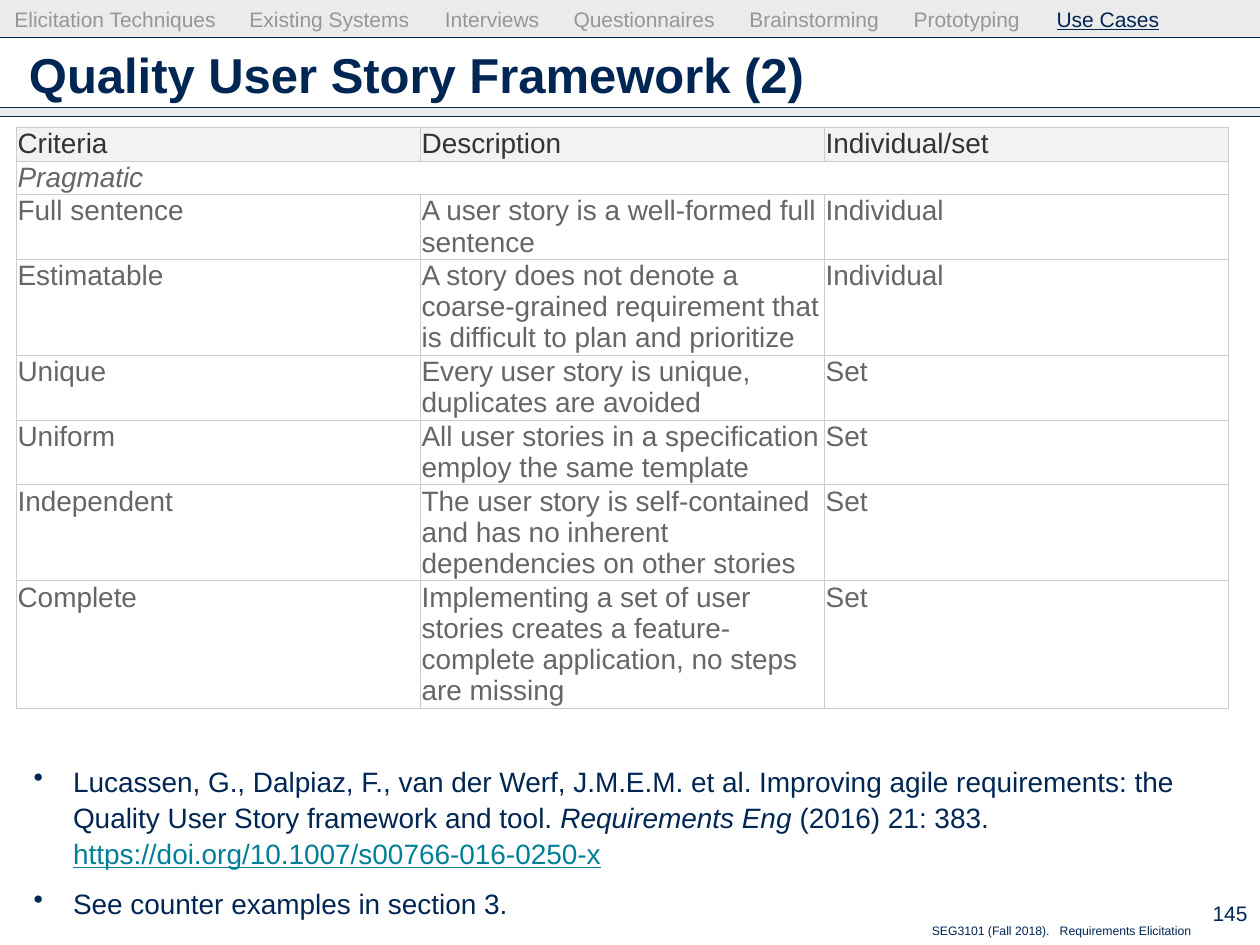
import pptx
import pptx.util
import pptx.oxml
import pptx.oxml.ns
import pptx.dml.color
import pptx.enum.text
import pptx.enum.shapes

Pt = pptx.util.Pt
Anchor = pptx.enum.text.MSO_ANCHOR
Align = pptx.enum.text.PP_ALIGN
qn = pptx.oxml.ns.qn

COLORS = {
    "navy": "002654", "band": "CDCDCD", "muted": "969696", "link": "007F99",
    "heading": "333333", "body": "666666", "header_fill": "F2F2F2",
    "cell_fill": "FFFFFF", "border": "CCCCCC",
}
SLIDE_WIDTH, SLIDE_HEIGHT = 720, 540
TITLE = "Quality User Story Framework (2)"
PAGE_NUMBER = "145"

SECTIONS = ["Elicitation Techniques", "Existing Systems", "Interviews", "Questionnaires",
            "Brainstorming", "Prototyping", "Use Cases"]
SECTION_TABS = [134.3, 246, 319.5, 420, 513.8, 595.5]
FOOTER = ["SEG3101 (Fall 2018).", "Requirements Elicitation"]
FOOTER_TABS = [73.1]

HEADER = ("Criteria", "Description", "Individual/set")
GROUP = "Pragmatic"
CRITERIA = [
    # criterion, description, scope, lines of text
    ("Full sentence", "A user story is a well-formed full sentence", "Individual", 2),
    ("Estimatable", "A story does not denote a coarse-grained requirement that is difficult "
     "to plan and prioritize", "Individual", 3),
    ("Unique", "Every user story is unique, duplicates are avoided", "Set", 2),
    ("Uniform", "All user stories in a specification employ the same template", "Set", 2),
    ("Independent", "The user story is self-contained and has no inherent dependencies on "
     "other stories", "Set", 3),
    ("Complete", "Implementing a set of user stories creates a feature-complete application, "
     "no steps are missing", "Set", 4),
]
TABLE_LEFT, TABLE_TOP, COLUMN_WIDTH = 9.36, 72.7, 230.9
LINE_HEIGHT, CELL_INSET = 17.8, 0.72

NOTES = [
    [("Lucassen, G., Dalpiaz, F., van der Werf, J.M.E.M. et al. Improving agile requirements: "
      "the Quality User Story framework and tool. ", {}),
     ("Requirements Eng ", {"italic": True}),
     ("(2016) 21: 383. ", {}),
     ("https://doi.org/10.1007/s00766-016-0250-x", {"color": "link", "underline": True})],
    [("See counter examples in section 3.", {})],
]
BULLET_INDENT = 22.5

BANDS = [(0, 21.6), (61.4, 5.3)]  # top, height
RULES = [21.6, 61.4, 66.7]


def rgb(name):
    return pptx.dml.color.RGBColor.from_string(COLORS[name])


def add_span(para, text, size, color="navy", **formats):
    span = para.add_run()
    span.text = text
    for name, value in {"name": "Arial", "size": Pt(size), **formats}.items():
        setattr(span.font, name, value)
    span.font.color.rgb = rgb(color)


def add_box(page, left, top, width, height, **formats):
    box = page.shapes.add_textbox(Pt(left), Pt(top), Pt(width), Pt(height))
    for name, value in {"word_wrap": True, **formats}.items():
        setattr(box.text_frame, name, value)
    return box.text_frame


def add_tabs(para, positions):
    properties = para._p.get_or_add_pPr()
    tabs = properties.makeelement(qn("a:tabLst"), {})
    for position in positions:
        tabs.append(tabs.makeelement(qn("a:tab"), {"pos": str(int(Pt(position))), "algn": "l"}))
    properties.append(tabs)


def add_bullet(para):
    properties = para._p.get_or_add_pPr()
    properties.set("marL", str(int(Pt(BULLET_INDENT))))
    properties.set("indent", str(-int(Pt(BULLET_INDENT))))
    properties.append(properties.makeelement(qn("a:buChar"), {"char": "•"}))


def add_band(page, top, height):
    band = page.shapes.add_shape(pptx.enum.shapes.MSO_SHAPE.RECTANGLE,
                                 0, Pt(top), Pt(SLIDE_WIDTH), Pt(height))
    band.shadow.inherit = False
    band.fill.solid()
    band.fill.fore_color.rgb = rgb("band")
    band.line.fill.background()
    color = band.fill._xPr.find(".//" + qn("a:srgbClr"))
    color.append(color.makeelement(qn("a:alpha"), {"val": "40000"}))


def add_rule(page, top):
    rule = page.shapes.add_connector(pptx.enum.shapes.MSO_CONNECTOR.STRAIGHT,
                                     0, Pt(top), Pt(SLIDE_WIDTH), Pt(top))
    rule.line.color.rgb = rgb("navy")
    rule.line.width = Pt(0.75)
    properties = rule._element.spPr
    properties.append(properties.makeelement(qn("a:effectLst"), {}))


def format_cell(cell, fill):
    """Border lines must precede the fill in the cell properties."""
    properties = cell._tc.get_or_add_tcPr()
    for side in "LRTB":
        properties.append(pptx.oxml.parse_xml(
            f'<a:ln{side} {pptx.oxml.ns.nsdecls("a")} w="{int(Pt(0.43))}"><a:solidFill>'
            f'<a:srgbClr val="{COLORS["border"]}"/></a:solidFill></a:ln{side}>'))
    cell.fill.solid()
    cell.fill.fore_color.rgb = rgb(fill)
    for side in ("left", "right", "top", "bottom"):
        setattr(cell, f"margin_{side}", Pt(CELL_INSET))


def add_criteria_table(page):
    rows = [(*HEADER, 1), (GROUP, "", "", 1), *CRITERIA]
    heights = [row[-1] * LINE_HEIGHT + 2 * CELL_INSET for row in rows]
    table = page.shapes.add_table(len(rows), len(HEADER), Pt(TABLE_LEFT), Pt(TABLE_TOP),
                                  Pt(COLUMN_WIDTH * len(HEADER)), Pt(sum(heights))).table
    table.first_row = table.horz_banding = False
    for column in table.columns:
        column.width = Pt(COLUMN_WIDTH)
    for index, (*texts, _) in enumerate(rows):
        table.rows[index].height = Pt(heights[index])
        for cell, text in zip(table.rows[index].cells, texts):
            format_cell(cell, "cell_fill" if index else "header_fill")
            if text:
                add_span(cell.text_frame.paragraphs[0], text, 16,
                         "body" if index else "heading", italic=text == GROUP)
    table.cell(1, 0).merge(table.cell(1, len(HEADER) - 1))


def add_title(page):
    title = page.shapes.title
    for name, value in {"left": 9.36, "top": 18.7, "width": 701.3, "height": 47.5}.items():
        setattr(title, name, Pt(value))
    title.text_frame.auto_size = pptx.enum.text.MSO_AUTO_SIZE.NONE
    title.text_frame.vertical_anchor = Anchor.MIDDLE
    para = title.text_frame.paragraphs[0]
    para.alignment = Align.LEFT
    add_span(para, TITLE, 28, bold=True)


def add_notes(page):
    frame = add_box(page, 12.2, 432, 684, 94.3)
    for index, spans in enumerate(NOTES):
        para = frame.add_paragraph() if index else frame.paragraphs[0]
        add_bullet(para)
        para.line_spacing = 1.07
        para.space_before = Pt(8 if index else 0)
        for text, formats in spans:
            add_span(para, text, 16, **formats)


def add_navigation(page):
    para = add_box(page, 1.2, 3.6, 690, 18, margin_top=0).paragraphs[0]
    add_tabs(para, SECTION_TABS)
    *others, current = SECTIONS
    add_span(para, "\t".join(others) + "\t", 12, "muted")
    add_span(para, current, 12, underline=True)


def add_footer(page):
    para = add_box(page, 525.4, 524.2, 180, 15.8).paragraphs[0]
    add_tabs(para, FOOTER_TABS)
    add_span(para, "\t".join(FOOTER), 7)
    number = add_box(page, 669.6, 509.8, 50.4, 24.5, vertical_anchor=Anchor.MIDDLE).paragraphs[0]
    number.alignment = Align.RIGHT
    add_span(number, PAGE_NUMBER, 12)


def main():
    deck = pptx.Presentation()
    deck.slide_width, deck.slide_height = Pt(SLIDE_WIDTH), Pt(SLIDE_HEIGHT)
    page = deck.slides.add_slide(deck.slide_layouts.get_by_name("Title Only"))
    for top, height in BANDS:
        add_band(page, top, height)
    for top in RULES:
        add_rule(page, top)
    add_title(page)
    add_criteria_table(page)
    add_notes(page)
    add_navigation(page)
    add_footer(page)
    deck.save("out.pptx")


if __name__ == "__main__":
    main()
